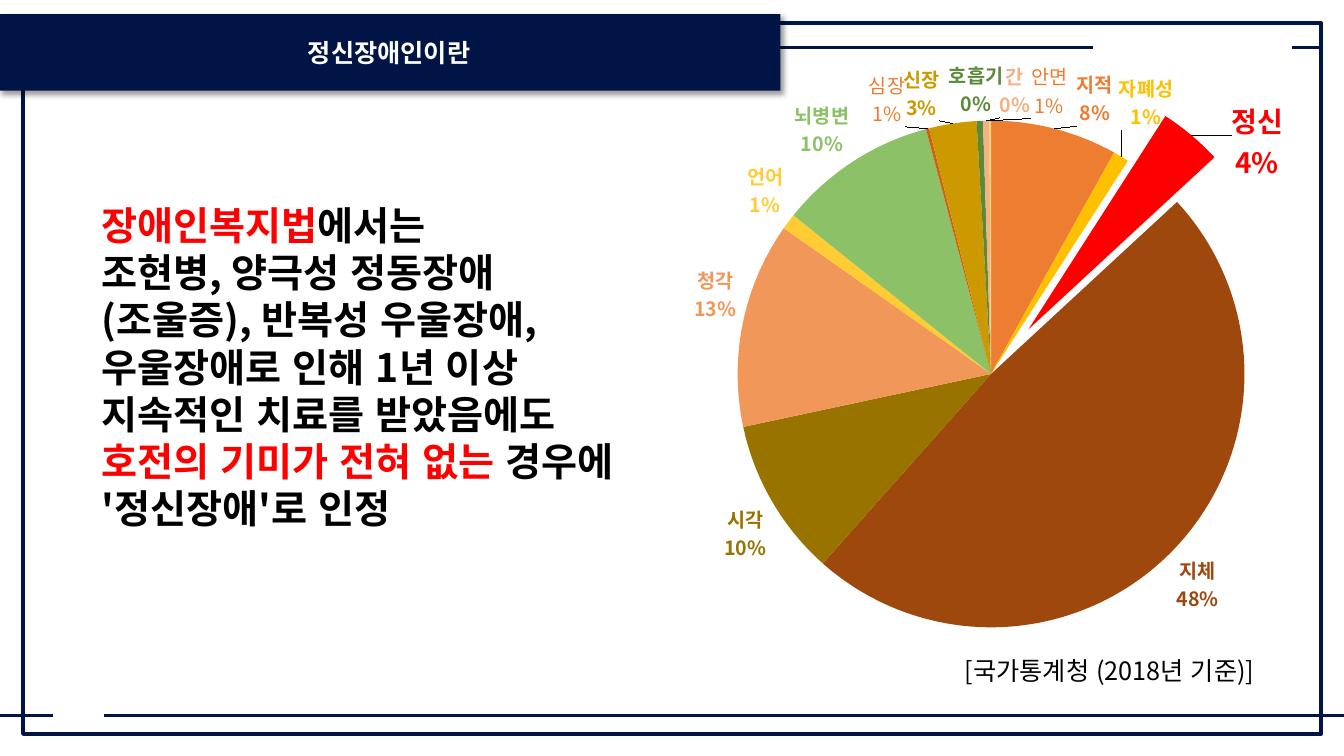
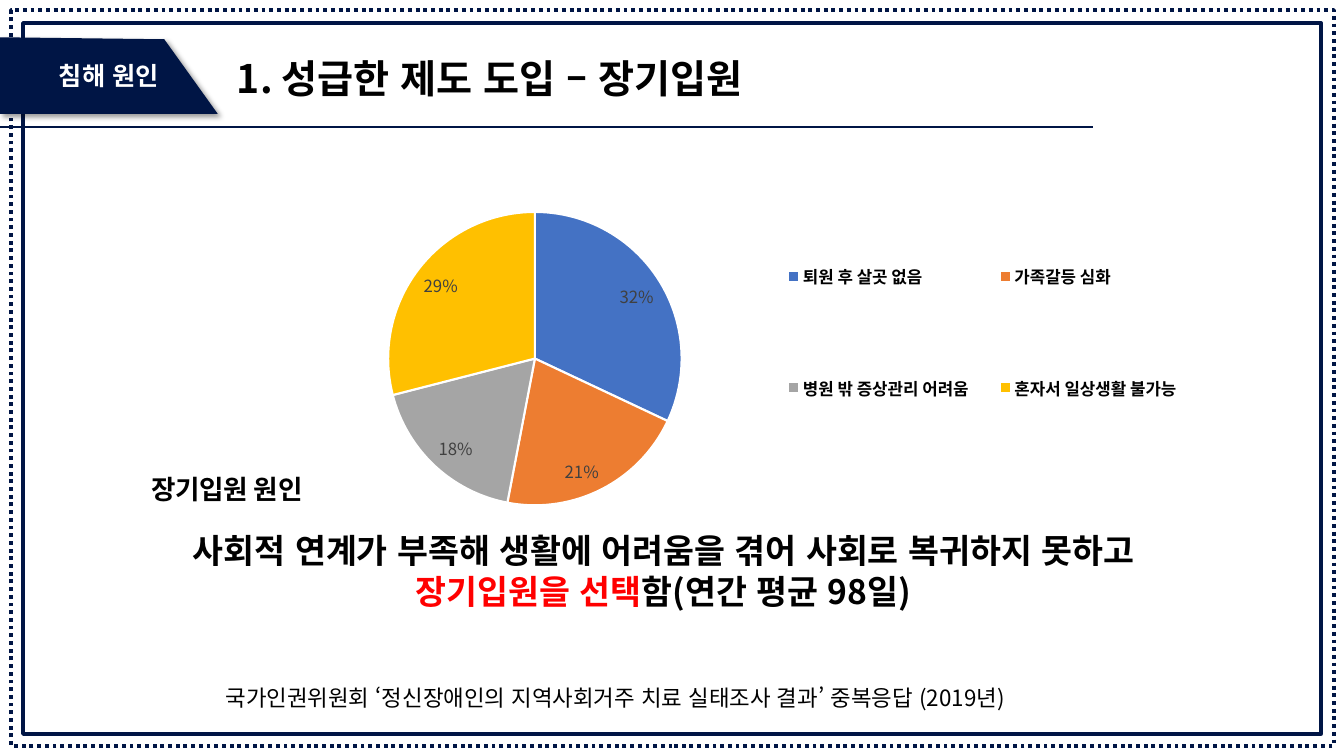
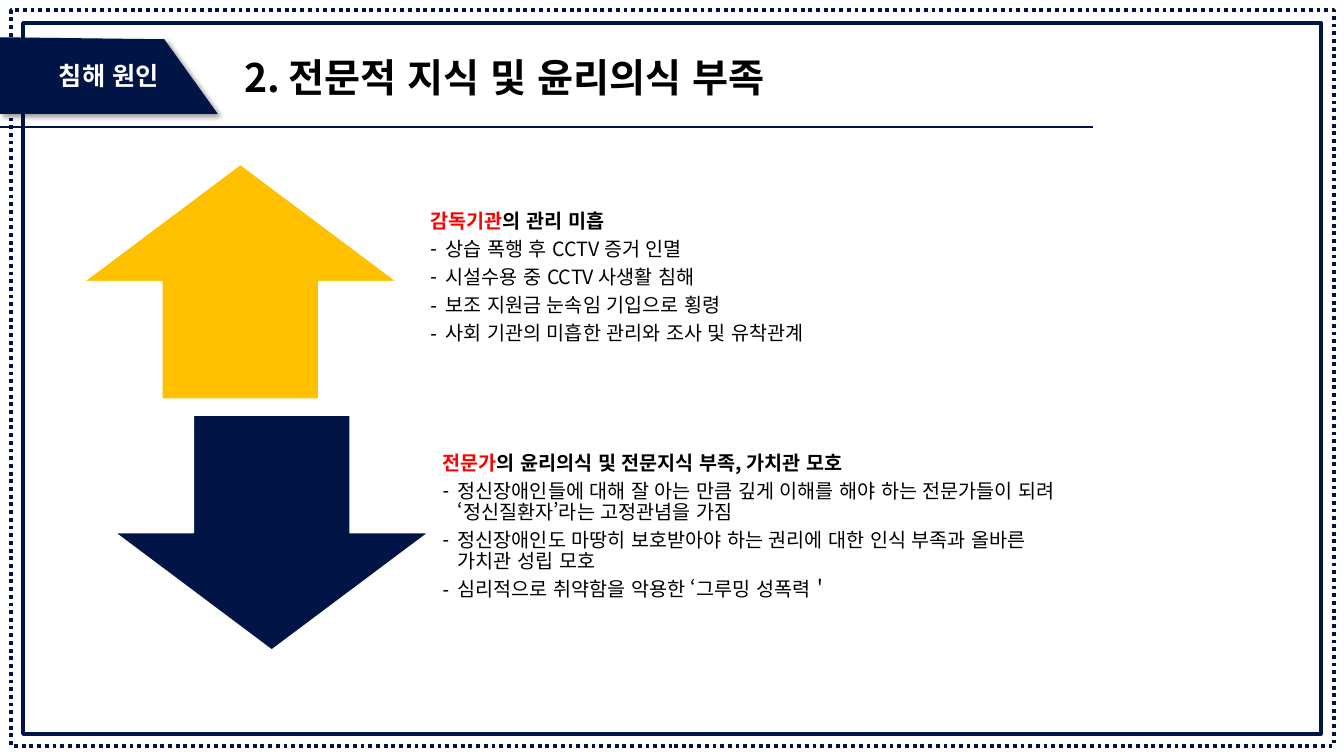
"""Build three slides on mental disability and the causes of rights violations."""
from dataclasses import dataclass

from lxml import etree
from pptx import Presentation
from pptx import util as u
from pptx.chart.data import CategoryChartData
from pptx.dml.color import RGBColor
from pptx.enum import chart as ch
from pptx.enum import dml, lang, shapes, text
from pptx.oxml import ns

PX = 9144


@dataclass(frozen=True)
class Theme:
    """Colours, font and type sizes."""
    navy: str = "001545"
    gold: str = "FFC000"
    red: str = "FF0000"
    black: str = "000000"
    white: str = "FFFFFF"
    gray: str = "404040"
    orange: str = "ED7D31"
    font: str = "Noto Sans CJK KR"
    head: int = 28
    lead: int = 24
    big: int = 20
    cap: int = 19
    tag: int = 18
    note: int = 16
    item: int = 14
    small: int = 12


T = Theme()

TYPES = [
    ("지적", 8, "ED7D31", (20, 3)),
    ("자폐성", 1, "FFC000", (-5, -21)),
    ("정신", 4, "FF0000", (36, 51)),
    ("지체", 48, "9E480E", None),
    ("시각", 10, "997300", None),
    ("", None, "43682B", None),
    ("청각", 13, "F1975A", None),
    ("언어", 1, "FFCD33", None),
    ("뇌병변", 10, "8CC168", None),
    ("심장", 0.2, "D26012", (-20, 4)),
    ("신장", 3, "CC9A00", (-12, 3)),
    ("호흡기", 0.4, "5A8A39", (-3, 2)),
    ("간", 0.4, "F4B183", (29, 3)),
    ("안면", 0.1, "FFD966", (59, 4)),
]
FIXED = {"심장": "1%", "안면": "1%"}
CAUSES = [
    ("퇴원 후 살곳 없음", 32, "4472C4"),
    ("가족갈등 심화", 21, "ED7D31"),
    ("병원 밖 증상관리 어려움", 18, "A5A5A5"),
    ("혼자서 일상생활 불가능", 29, "FFC000"),
]
WATCH = [
    "상습 폭행 후 CCTV 증거 인멸",
    "시설수용 중 CCTV 사생활 침해",
    "보조 지원금 눈속임 기입으로 횡령",
    "사회 기관의 미흡한 관리와 조사 및 유착관계",
]
ETHICS = [
    "정신장애인들에 대해 잘 아는 만큼 깊게 이해를 해야 하는 전문가들이 되려\v‘정신질환자’라는 고정관념을 가짐",
    "정신장애인도 마땅히 보호받아야 하는 권리에 대한 인식 부족과 올바른\v가치관 성립 모호",
    "심리적으로 취약함을 악용한 ‘그루밍 성폭력＇",
]


def px(*nums):
    """Turn px lengths into EMU."""
    return [u.Emu(round(n * PX)) for n in nums]


def rgb(code):
    """Make a colour from its hex code."""
    return RGBColor.from_string(code)


def sub(node, tag, **attrs):
    """Append a namespaced child element."""
    return etree.SubElement(node, ns.qn(tag), **attrs)


def style(font, size, color=T.black, bold=False):
    """Set a font's face, size, weight and colour."""
    font.name, font.size, font.bold = T.font, u.Pt(size), bold
    font.color.rgb = rgb(color)


def mark(para, dash):
    """Give a paragraph a dash bullet, or none."""
    props = para._p.get_or_add_pPr()
    inset = 15 * PX if dash else 0
    props.set("marL", str(inset))
    props.set("indent", str(-inset))
    if dash:
        sub(props, "a:buChar", char="-")
    else:
        sub(props, "a:buNone")


def write(para, parts, size, color=T.black, bold=True, align=None, dash=False):
    """Fill one paragraph from (text, colour) parts."""
    mark(para, dash)
    style(para.font, size, color, bold)
    para.font.language_id = lang.MSO_LANGUAGE_ID.KOREAN
    sub(para.font._element, "a:ea", typeface=T.font)
    para.alignment = align or text.PP_ALIGN.LEFT
    para.space_before = u.Pt(0)
    for words, tint in parts:
        for n, line in enumerate(words.split("\v")):
            if n:
                para.add_line_break()
            run = para.add_run()
            run.text = line
            if tint:
                run.font.color.rgb = rgb(tint)


def place(slide, hold, box, anchor=text.MSO_ANCHOR.TOP):
    """Move a placeholder to the front and return its text frame."""
    hold.left, hold.top, hold.width, hold.height = px(*box)
    slide.shapes.element.append(hold.element)
    return setup(hold.text_frame, anchor)


def setup(frame, anchor=text.MSO_ANCHOR.TOP):
    """Set wrapping and anchor of a text frame."""
    frame.word_wrap = True
    frame.auto_size = text.MSO_AUTO_SIZE.NONE
    frame.vertical_anchor = anchor
    return frame


def label(slide, box, words, size):
    """Add a plain one-line text box."""
    frame = setup(slide.shapes.add_textbox(*px(*box)).text_frame)
    write(frame.paragraphs[0], [(words, None)], size, bold=False)


def shade(shape):
    """Fill a shape navy and give it a soft shadow."""
    shape.fill.solid()
    shape.fill.fore_color.rgb = rgb(T.navy)
    shape.line.fill.background()
    shape.shadow.inherit = False
    effects = shape._element.spPr.find(ns.qn("a:effectLst"))
    outer = sub(effects, "a:outerShdw", blurRad="50800", dist="38100",
                dir="2700000", algn="tl", rotWithShape="0")
    sub(sub(outer, "a:srgbClr", val=T.black), "a:alpha", val="40000")


def frame(slide, box, width, dash=None):
    """Draw an unfilled navy border."""
    rect = slide.shapes.add_shape(shapes.MSO_SHAPE.RECTANGLE, *px(*box))
    rect.shadow.inherit = False
    rect.fill.background()
    rect.line.color.rgb = rgb(T.navy)
    rect.line.width = u.Pt(width)
    if dash:
        rect.line.dash_style = dash


def rule(slide, start, end, y):
    """Draw a level navy line."""
    line = slide.shapes.add_connector(
        shapes.MSO_CONNECTOR.STRAIGHT, *px(start, y, end, y))
    line.line.color.rgb = rgb(T.navy)
    line.line.width = u.Pt(2)
    sub(line._element.spPr, "a:effectLst")


def arrow(slide, kind, box, color):
    """Draw a block arrow."""
    shape = slide.shapes.add_shape(kind, *px(*box))
    shape.shadow.inherit = False
    shape.fill.solid()
    shape.fill.fore_color.rgb = rgb(color)
    shape.line.color.rgb = rgb(T.white)
    shape.line.width = u.Pt(1)


def topic(deck, layout, title, box):
    """Start a slide with double border, side tag and title."""
    slide = deck.slides.add_slide(deck.slide_layouts[layout])
    frame(slide, (23, 23, 1287, 705), 3)
    frame(slide, (11, 10, 1312, 730), 2.75, dml.MSO_LINE.ROUND_DOT)
    path = slide.shapes.build_freeform(0, 37, scale=PX)
    path.add_line_segments([(163, 39), (216, 113), (0, 113)], close=True)
    tag = path.convert_to_shape()
    shade(tag)
    inner = setup(tag.text_frame, text.MSO_ANCHOR.MIDDLE)
    write(inner.paragraphs[0], [("침해 원인", None)], T.tag, T.white,
          align=text.PP_ALIGN.CENTER)
    rule(slide, 1084, -2, 126)
    head = place(slide, slide.shapes.title, box)
    write(head.paragraphs[0], [(title, None)], T.head)
    return slide


def points(slide, hold, box, key, rest, items):
    """Fill a body placeholder with a heading and dashed items."""
    body = place(slide, hold, box, text.MSO_ANCHOR.MIDDLE)
    body.margin_left, body.margin_top, body.margin_right, body.margin_bottom = px(11, 0, 11, 11)
    rows = [[(key, T.red), (rest, None)]] + [[(item, None)] for item in items]
    for n, parts in enumerate(rows):
        para = body.add_paragraph() if n else body.paragraphs[0]
        write(para, parts, T.item, bold=n == 0, dash=n > 0)
        para.line_spacing = 0.9
        para.space_after = u.Pt(5)


def layout(node, at, x, y, w=None, h=None, inner=False):
    """Give a chart part a manual layout."""
    for old in node.findall(ns.qn("c:layout")):
        node.remove(old)
    outer = etree.Element(ns.qn("c:layout"))
    node.insert(at, outer)
    man = sub(outer, "c:manualLayout")
    if inner:
        sub(man, "c:layoutTarget", val="inner")
    if at != 1 or w:
        sub(man, "c:xMode", val="edge")
        sub(man, "c:yMode", val="edge")
    for tag, num in zip("xywh", (x, y, w, h)):
        if num is not None:
            sub(man, f"c:{tag}", val=f"{num:.3f}")


def pie(slide, box, rows, plot):
    """Add a pie chart of (name, value, colour) rows."""
    data = CategoryChartData()
    data.categories = [row[0] for row in rows]
    data.add_series("Series 1", [row[1] for row in rows])
    chart = slide.shapes.add_chart(ch.XL_CHART_TYPE.PIE, *px(*box), data).chart
    style(chart.font, 10)
    chart.has_title = chart.has_legend = False
    area = chart.plots[0]
    area.vary_by_categories = True
    layout(chart._chartSpace.chart.plotArea, 0, *plot, inner=True)
    for n, row in enumerate(rows):
        fill = area.series[0].points[n].format.fill
        fill.solid()
        fill.fore_color.rgb = rgb(row[2])
    return chart


def tip(series, n, row, size):
    """Label one slice with its name and share, shifted by px."""
    name, _, color, shift = row
    fixed = name in FIXED
    mine = series.points[n].data_label
    if fixed:
        mine.text_frame.text = f"{name}\n{FIXED[name]}"
        for para in mine.text_frame.paragraphs:
            style(para.runs[0].font, T.item, T.orange)
    else:
        style(mine.font, T.big if color == T.red else T.item, color, True)
    mine.position = ch.XL_LABEL_POSITION.OUTSIDE_END
    node = series._element.xpath(f'.//c:dLbl[c:idx/@val="{n}"]')[0]
    for tag, on in (("showVal", 0), ("showCatName", 1), ("showPercent", 1)):
        node.find(ns.qn(f"c:{tag}")).set("val", str(on))
    sub(node, "c:separator").text = "\n"
    if shift:
        layout(node, 1, shift[0] / size[0], shift[1] / size[1])


def intro(deck):
    """Slide defining mental disability, with a pie of types."""
    slide = deck.slides.add_slide(deck.slide_layouts[1])
    frame(slide, (23, 23, 1287, 705), 3)
    for start, end, y in ((1084, -2, 47), (1333, 103, 710),
                          (1310, 1281, 47), (53, 0, 710)):
        rule(slide, start, end, y)
    title = slide.shapes.title
    head = place(slide, title, (-2, 14, 776, 76), text.MSO_ANCHOR.MIDDLE)
    shade(title)
    write(head.paragraphs[0], [("정신장애인이란", None)], T.tag, T.white,
          align=text.PP_ALIGN.CENTER)
    body = place(slide, slide.placeholders[1], (91, 195, 531, 340))
    write(body.paragraphs[0], [("장애인복지법", T.red), ("에서는", None)], T.head)
    write(body.add_paragraph(), [
        ("조현병, 양극성 정동장애(조울증), 반복성 우울장애, 우울장애로 인해 1년 이상 "
         "지속적인 치료를 받았음에도 ", None),
        ("호전의 기미가 전혀 없는", T.red),
        (" 경우에 '정신장애'로 인정", None)], T.head)
    chart = pie(slide, (639, 47, 652, 625), TYPES, (0.142, 0.075, 0.771, 0.887))
    series = chart.plots[0].series[0]
    for n, row in enumerate(TYPES):
        if row[0]:
            tip(series, n, row, (652, 625))
        if row[2] == T.red:
            cut = series._element.xpath(f'./c:dPt[c:idx/@val="{n}"]/c:spPr')[0]
            burst = etree.Element(ns.qn("c:explosion"), val="23")
            cut.addprevious(burst)
    label(slide, (947, 645, 374, 40), "[국가통계청 (2018년 기준)]", T.tag)


def stay(deck):
    """Slide on long hospital stays, with a pie of causes."""
    slide = topic(deck, 1, "1. 성급한 제도 도입 – 장기입원", (225, 49, 865, 57))
    body = place(slide, slide.placeholders[1], (128, 521, 1060, 131))
    write(body.paragraphs[0], [
        ("사회적 연계가 부족해 생활에 어려움을 겪어 사회로 복귀하지 못하고 ", None),
        ("장기입원을 선택", T.red), ("함(연간 평균 98일)", None)],
        T.lead, align=text.PP_ALIGN.CENTER)
    chart = pie(slide, (46, 131, 1169, 384), CAUSES, (0.29, 0.206, 0.249, 0.759))
    area = chart.plots[0]
    for n in range(len(CAUSES)):
        edge = area.series[0].points[n].format.line
        edge.color.rgb = rgb(T.white)
        edge.width = u.Pt(1.5)
    area.has_data_labels = True
    tags = area.data_labels
    tags.show_percentage, tags.show_value = True, False
    tags.position = ch.XL_LABEL_POSITION.INSIDE_END
    style(tags.font, T.small, T.gray)
    chart.has_legend = True
    key = chart.legend
    key.position = ch.XL_LEGEND_POSITION.RIGHT
    key.include_in_layout = False
    style(key.font, T.small, bold=True)
    layout(key._element, 1, 0.608, 0.117, 0.373, 0.8)
    chart.has_title = True
    name = chart.chart_title.text_frame
    name.text = "장기입원 원인"
    style(name.paragraphs[0].runs[0].font, T.cap, bold=True)
    layout(chart.chart_title._element, 1, 0.085, 0.85, 0.15, 0.1)
    label(slide, (214, 674, 1000, 37),
          "국가인권위원회 ‘정신장애인의 지역사회거주 치료 실태조사 결과’ 중복응답 (2019년)", T.note)


def skill(deck):
    """Slide on missing expertise and ethics."""
    slide = topic(deck, 3, "2. 전문적 지식 및 윤리의식 부족", (232, 48, 869, 57))
    arrow(slide, shapes.MSO_SHAPE.UP_ARROW, (83, 163, 311, 233), T.gold)
    arrow(slide, shapes.MSO_SHAPE.DOWN_ARROW, (114, 412, 311, 233), T.navy)
    points(slide, slide.placeholders[1], (416, 165, 807, 233),
           "감독기관", "의 관리 미흡", WATCH)
    points(slide, slide.placeholders[2], (428, 412, 743, 233),
           "전문가", "의 윤리의식 및 전문지식 부족, 가치관 모호", ETHICS)


def main():
    """Build and save the deck."""
    deck = Presentation()
    deck.slide_width, deck.slide_height = px(1333, 750)
    intro(deck)
    stay(deck)
    skill(deck)
    deck.save("out.pptx")


if __name__ == "__main__":
    main()
